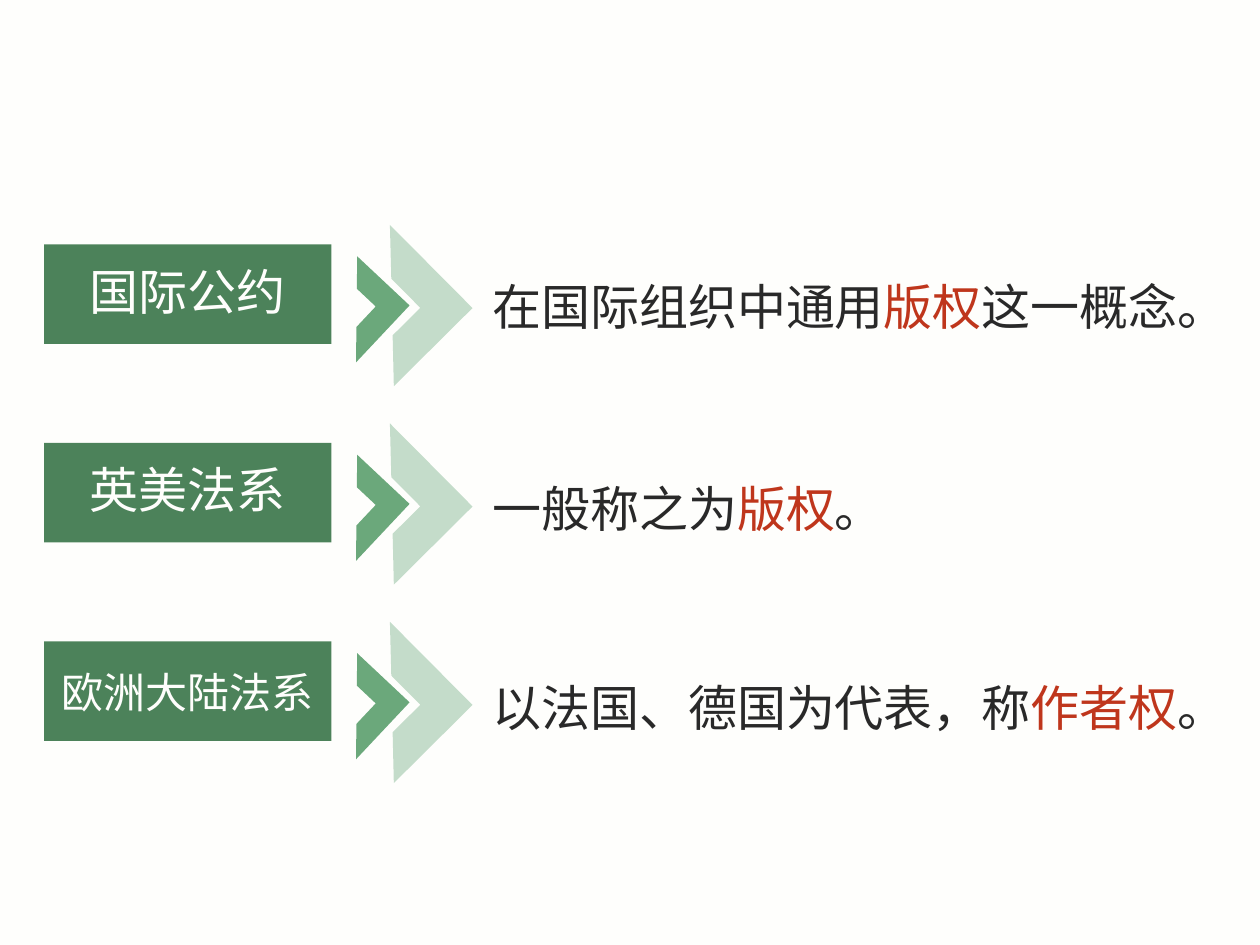
from dataclasses import dataclass

from pptx import Presentation
from pptx.dml.color import RGBColor
from pptx.enum.shapes import MSO_SHAPE
from pptx.enum.text import MSO_AUTO_SIZE, PP_ALIGN
from pptx.util import Inches, Pt

RECTANGLE = MSO_SHAPE.RECTANGLE
HALF_FRAME = MSO_SHAPE.HALF_FRAME
FIT_SHAPE = MSO_AUTO_SIZE.SHAPE_TO_FIT_TEXT
CENTER, LEFT = PP_ALIGN.CENTER, PP_ALIGN.LEFT

BACKGROUND = RGBColor(0xFE, 0xFE, 0xFC)
DARK_GREEN = RGBColor(0x4C, 0x82, 0x5A)
MID_GREEN = RGBColor(0x6B, 0xA8, 0x7B)
PALE_GREEN = RGBColor(0xC4, 0xDC, 0xCA)
INK = RGBColor(0x29, 0x29, 0x29)
RED = RGBColor(0xBF, 0x36, 0x1C)

FONT = "Noto Sans CJK SC"
LINE_PITCH = 1.21
FIRST_ROW_TOP = 1.94
ROW_PITCH = 1.575


@dataclass(frozen=True)
class Box:
    """Inches; top is measured from the top of the row."""
    left: float
    top: float
    width: float
    height: float


@dataclass(frozen=True)
class Term:
    label: str
    before: str
    keyword: str
    after: str
    label_box: Box = Box(0.51, 0.08, 1.96, 0.57)
    label_size: int = 28
    description_top: float = 0.23


PLATE = Box(0.35, 0, 2.28, 0.79)
LARGE_CHEVRON = Box(2.67, 0.02, 0.88, 0.93)
SMALL_CHEVRON = Box(2.52, 0.23, 0.62, 0.57)

TERMS = [
    Term("国际公约", "在国际组织中通用", "版权", "这一概念。", description_top=0.2),
    Term("英美法系", "一般称之为", "版权", "。"),
    Term("欧洲大陆法系", "以法国、德国为代表，称", "作者权", "。",
         label_box=Box(0.35, 0.15, 2.28, 0.5), label_size=24),
]


def place(box: Box, row_top: float) -> list[int]:
    """Return left, top, width and height on the slide."""
    return [Inches(length) for length in
            (box.left, row_top + box.top, box.width, box.height)]


def add_plain_shape(slide, kind, box: Box, row_top: float, color: RGBColor,
                    rotation: float = 0) -> None:
    shape = slide.shapes.add_shape(kind, *place(box, row_top))
    shape.rotation = rotation
    shape.shadow.inherit = False
    shape.fill.solid()
    shape.fill.fore_color.rgb = color
    shape.line.fill.background()


def add_text(slide, box: Box, row_top: float, pieces: list[tuple[str, RGBColor]],
             size: int, alignment) -> None:
    text_frame = slide.shapes.add_textbox(*place(box, row_top)).text_frame
    text_frame.word_wrap = True
    text_frame.auto_size = FIT_SHAPE
    paragraph = text_frame.paragraphs[0]
    paragraph.alignment = alignment
    paragraph.line_spacing = Pt(round(size * LINE_PITCH))
    for text, color in pieces:
        run = paragraph.add_run()
        run.text = text
        run.font.size = Pt(size)
        run.font.name = FONT
        run.font.color.rgb = color
        east_asian = run.font._element.makeelement(
            "{http://schemas.openxmlformats.org/drawingml/2006/main}ea",
            {"typeface": FONT})
        run.font._element.append(east_asian)


def add_term(slide, term: Term, row_top: float) -> None:
    add_plain_shape(slide, HALF_FRAME, LARGE_CHEVRON, row_top, PALE_GREEN, 135.2)
    add_plain_shape(slide, HALF_FRAME, SMALL_CHEVRON, row_top, MID_GREEN, 133.2)
    add_plain_shape(slide, RECTANGLE, PLATE, row_top, DARK_GREEN)
    add_text(slide, term.label_box, row_top, [(term.label, BACKGROUND)],
             term.label_size, CENTER)
    description = Box(3.81, term.description_top, 5.79, 0.57)
    pieces = [(term.before, INK), (term.keyword, RED), (term.after, INK)]
    add_text(slide, description, row_top, pieces, 28, LEFT)


def main() -> None:
    presentation = Presentation()
    presentation.slide_width = Inches(10)
    presentation.slide_height = Inches(7.5)
    blank_layout = presentation.slide_layouts[6]
    slide = presentation.slides.add_slide(blank_layout)
    slide.background.fill.solid()
    slide.background.fill.fore_color.rgb = BACKGROUND
    for row, term in enumerate(TERMS):
        add_term(slide, term, FIRST_ROW_TOP + row * ROW_PITCH)
    presentation.save("out.pptx")


if __name__ == "__main__":
    main()
